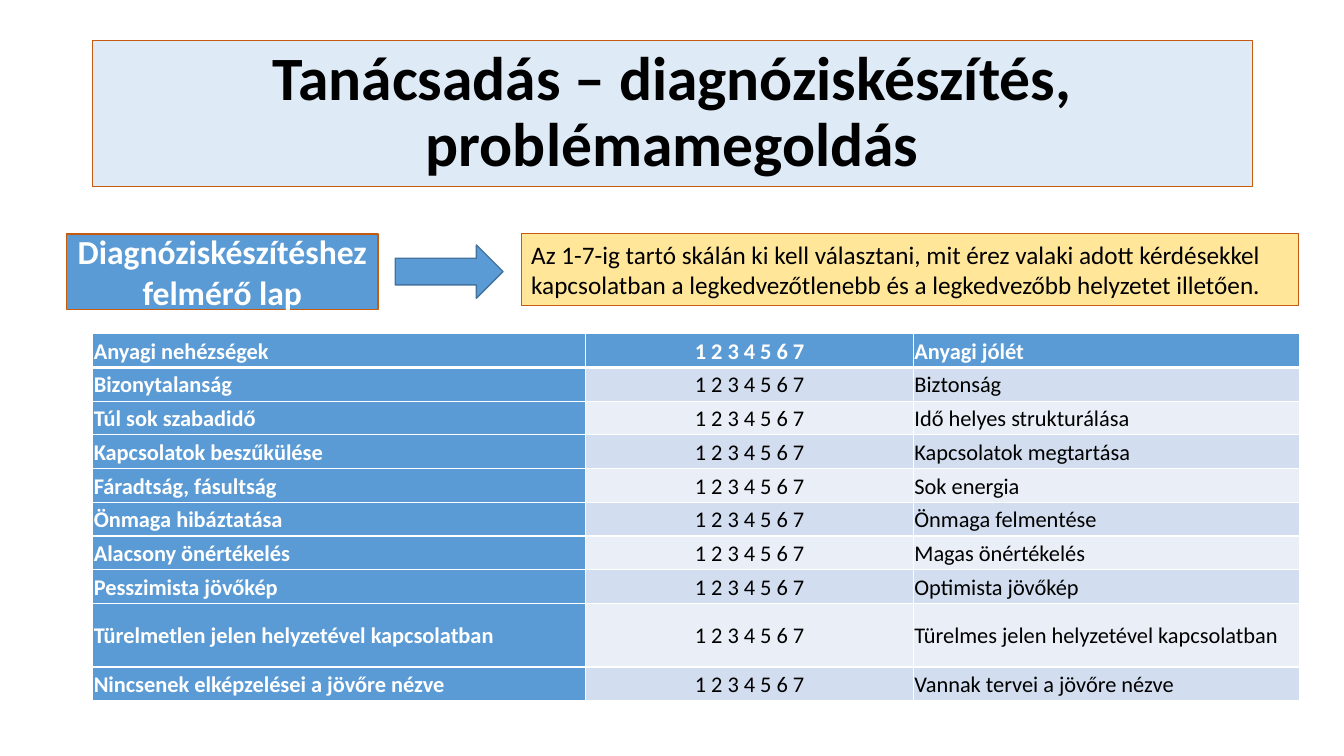
from lxml.etree import SubElement
from pptx import Presentation
from pptx.dml.color import RGBColor
from pptx.enum.shapes import MSO_SHAPE
from pptx.enum.text import MSO_ANCHOR, PP_ALIGN
from pptx.oxml.ns import qn
from pptx.util import Inches, Pt

TITLE = "Tanácsadás – diagnóziskészítés, problémamegoldás"
LABEL = "Diagnóziskészítéshez felmérő lap"
GUIDE = ("Az 1-7-ig tartó skálán ki kell választani, mit érez valaki adott kérdésekkel "
         "kapcsolatban a legkedvezőtlenebb és a legkedvezőbb helyzetet illetően.")
SCALE = "1 2 3 4 5 6 7"
OPPOSITES = [
    ("Anyagi nehézségek", "Anyagi jólét"),
    ("Bizonytalanság", "Biztonság"),
    ("Túl sok szabadidő", "Idő helyes strukturálása"),
    ("Kapcsolatok beszűkülése", "Kapcsolatok megtartása"),
    ("Fáradtság, fásultság", "Sok energia"),
    ("Önmaga hibáztatása", "Önmaga felmentése"),
    ("Alacsony önértékelés", "Magas önértékelés"),
    ("Pesszimista jövőkép", "Optimista jövőkép"),
    ("Türelmetlen jelen helyzetével kapcsolatban", "Türelmes jelen helyzetével kapcsolatban"),
    ("Nincsenek elképzelései a jövőre nézve", "Vannak tervei a jövőre nézve"),
]
COL_WIDTHS = (4.89, 3.25, 3.83)
ROW_HEIGHT, TALL_HEIGHT, TALL_ROW = 0.335, 0.63, 8

WHITE = RGBColor(0xFF, 0xFF, 0xFF)
BLACK = RGBColor(0, 0, 0)
BLUE = RGBColor(0x5B, 0x9B, 0xD5)
DARK_BLUE = RGBColor(0x43, 0x73, 0x9E)
PALE_BLUE = RGBColor(0xDE, 0xEB, 0xF7)
ORANGE = RGBColor(0xC5, 0x5A, 0x11)
YELLOW = RGBColor(0xFF, 0xE6, 0x99)
BANDS = (RGBColor(0xEA, 0xEF, 0xF7), RGBColor(0xD2, 0xDE, 0xEF))


def write(tf, text, size, color=BLACK, bold=False, align=PP_ALIGN.LEFT,
          anchor=MSO_ANCHOR.MIDDLE, spacing=None, after=None):
    tf.word_wrap = True
    tf.vertical_anchor = anchor
    p = tf.paragraphs[0]
    p.alignment = align
    p.line_spacing = spacing
    p.space_after = after
    r = p.add_run()
    r.text = text
    r.font.name, r.font.size, r.font.bold = "Calibri", Pt(size), bold
    r.font.color.rgb = color


def paint(sp, fill, line, width):
    sp.fill.solid()
    sp.fill.fore_color.rgb = fill
    sp.line.color.rgb = line
    sp.line.width = Pt(width)


def add_box(s, kind, box, fill, line, width):
    sp = s.shapes.add_shape(kind, *map(Inches, box))
    sp.shadow.inherit = False
    paint(sp, fill, line, width)
    return sp


def add_borders(cell, bottom, top):
    tc_pr = cell._tc.get_or_add_tcPr()
    for side, width in (("L", 1), ("R", 1), ("T", top), ("B", bottom)):
        ln = SubElement(tc_pr, qn("a:ln" + side), w=str(Pt(width)))
        fill = SubElement(ln, qn("a:solidFill"))
        SubElement(fill, qn("a:srgbClr"), val=str(WHITE))


def add_scale_table(s):
    height = ROW_HEIGHT * (len(OPPOSITES) - 1) + TALL_HEIGHT
    frame = s.shapes.add_table(len(OPPOSITES), len(COL_WIDTHS), Inches(0.92), Inches(3.31),
                               Inches(sum(COL_WIDTHS)), Inches(height))
    table = frame.table
    for col, width in zip(table.columns, COL_WIDTHS):
        col.width = Inches(width)
    for i, (bad, good) in enumerate(OPPOSITES):
        table.rows[i].height = Inches(TALL_HEIGHT if i == TALL_ROW else ROW_HEIGHT)
        for j, text in enumerate((bad, SCALE, good)):
            cell = table.cell(i, j)
            strong = i == 0 or j == 0
            cell.margin_left = cell.margin_right = Inches(0.01)
            cell.margin_top = cell.margin_bottom = Inches(0.01)
            cell.vertical_anchor = MSO_ANCHOR.MIDDLE
            add_borders(cell, bottom=3 if i == 0 else 1, top=3 if i == 1 else 1)
            cell.fill.solid()
            cell.fill.fore_color.rgb = BLUE if strong else BANDS[i % 2]
            write(cell.text_frame, text, 16, WHITE if strong else BLACK, strong,
                  PP_ALIGN.CENTER if j == 1 else PP_ALIGN.LEFT, None,
                  spacing=1.07, after=Pt(8))


def main():
    prs = Presentation()
    prs.slide_width, prs.slide_height = Inches(13.33), Inches(7.5)
    s = prs.slides.add_slide(prs.slide_layouts[5])

    title = s.shapes.title
    title.left, title.top, title.width, title.height = map(Inches, (0.92, 0.4, 11.5, 1.45))
    paint(title, PALE_BLUE, ORANGE, 0.75)
    write(title.text_frame, TITLE, 44, bold=True, align=PP_ALIGN.CENTER, spacing=0.9)

    label = add_box(s, MSO_SHAPE.RECTANGLE, (0.66, 2.32, 3.09, 0.75), BLUE, ORANGE, 1)
    write(label.text_frame, LABEL, 24, WHITE, True, PP_ALIGN.CENTER)
    add_box(s, MSO_SHAPE.RIGHT_ARROW, (3.92, 2.43, 1.07, 0.53), BLUE, DARK_BLUE, 1)
    guide = add_box(s, MSO_SHAPE.RECTANGLE, (5.17, 2.32, 7.71, 0.71), YELLOW, ORANGE, 0.75)
    write(guide.text_frame, GUIDE, 18, anchor=MSO_ANCHOR.TOP)

    add_scale_table(s)
    prs.save("out.pptx")


if __name__ == "__main__":
    main()
